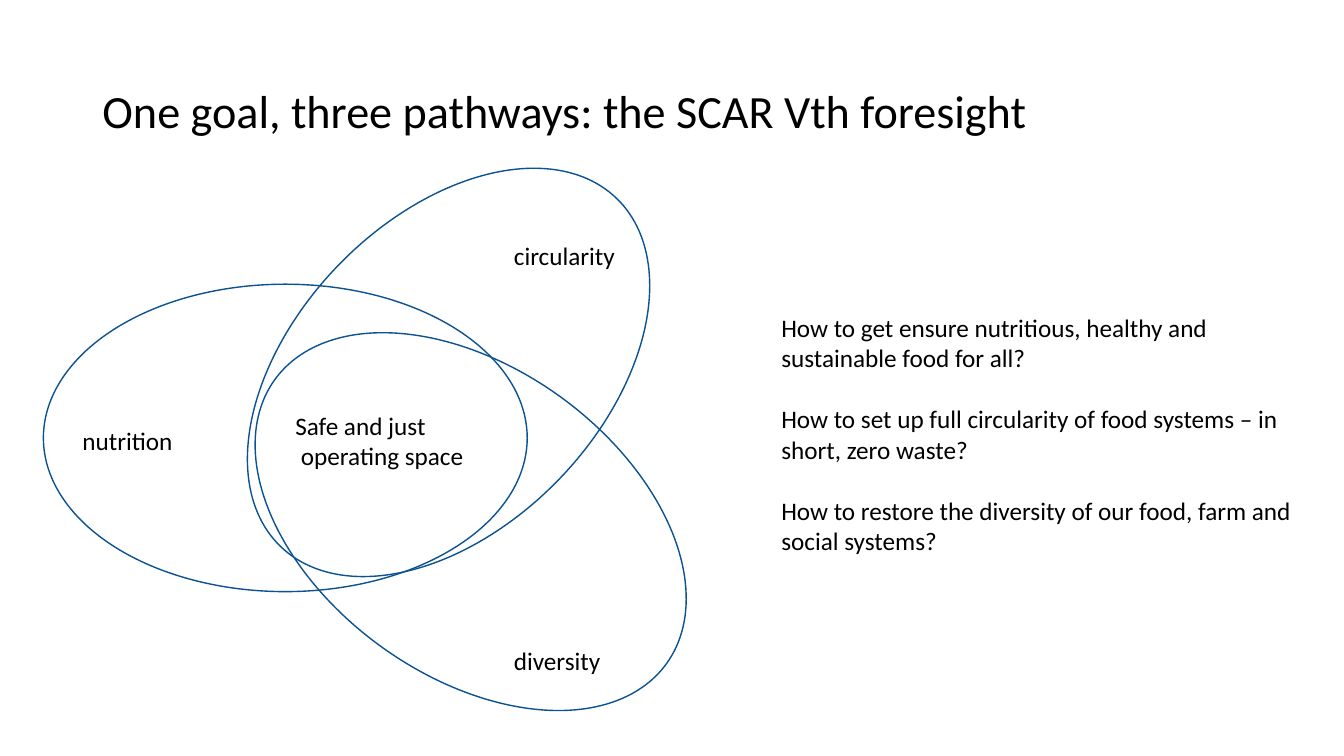
from collections import namedtuple

from pptx import Presentation
from pptx.dml.color import RGBColor
from pptx.enum.shapes import MSO_SHAPE
from pptx.enum.text import MSO_ANCHOR, MSO_AUTO_SIZE, PP_ALIGN
from pptx.util import Pt

Box = namedtuple("Box", "left top width height")

COLORS = {"text": "000000", "outline": "0B5292"}
FONT = "Calibri"
BODY_SIZE = 18
LINE_HEIGHT = 22
OVAL_WIDTH, OVAL_HEIGHT = 345.6, 219.6

PATHWAYS = [
    (116.6, 36.2, 134),
    (132.4, 142.8, 36),
    (0, 83, 0),
]
LABELS = [
    (["circularity"], Box(329, 47.8, 87.1, 29)),
    (["nutrition"], Box(20.8, 180.2, 79.9, 29)),
    (["diversity"], Box(329, 337.2, 77, 29)),
    (["Safe and just", " operating space"], Box(172.8, 169.4, 136.1, 51)),
]
QUESTIONS = [
    "How to get ensure nutritious, healthy and sustainable food for all?",
    "How to set up full circularity of food systems – in short, zero waste?",
    "How to restore the diversity of our food, farm and social systems?",
]


def style_paragraph(para, size):
    """Apply the common font and left alignment to a paragraph."""
    para.alignment = PP_ALIGN.LEFT
    para.font.name = FONT
    para.font.size = Pt(size)
    para.font.color.rgb = RGBColor.from_string(COLORS["text"])


def add_text(page, box, lines, wrap, gap=0):
    """Add a text box with one paragraph per line, set apart by gap."""
    frame = page.shapes.add_textbox(*map(Pt, box)).text_frame
    frame.word_wrap = wrap
    frame.auto_size = MSO_AUTO_SIZE.SHAPE_TO_FIT_TEXT
    for index, line in enumerate(lines):
        para = frame.add_paragraph() if index else frame.paragraphs[0]
        para.text = line
        para.space_before = Pt(gap if index else 0)
        style_paragraph(para, BODY_SIZE)


def fill_title(page, box, text):
    """Place and format the title placeholder."""
    title = page.shapes.title
    title.left, title.top, title.width, title.height = map(Pt, box)
    frame = title.text_frame
    frame.text = text
    frame.word_wrap = True
    frame.auto_size = MSO_AUTO_SIZE.NONE
    frame.vertical_anchor = MSO_ANCHOR.MIDDLE
    para = frame.paragraphs[0]
    para.line_spacing = 0.9
    style_paragraph(para, 33)


def add_pathway_diagram(page, box):
    """Draw three overlapping ovals and their labels inside the box."""
    for left, top, angle in PATHWAYS:
        oval = page.shapes.add_shape(
            MSO_SHAPE.OVAL, Pt(box.left + left), Pt(box.top + top),
            Pt(OVAL_WIDTH), Pt(OVAL_HEIGHT))
        oval.rotation = angle
        oval.shadow.inherit = False
        oval.fill.background()
        oval.line.color.rgb = RGBColor.from_string(COLORS["outline"])
        oval.line.width = Pt(1)
    for lines, label in LABELS:
        place = label._replace(left=box.left + label.left, top=box.top + label.top)
        add_text(page, place, lines, wrap=False)


def main():
    """Build the slide and save the deck."""
    deck = Presentation()
    deck.slide_width, deck.slide_height = Pt(960), Pt(540)
    page = deck.slides.add_slide(deck.slide_layouts[5])
    fill_title(page, Box(66, 28.8, 828, 104.4),
               "One goal, three pathways: the SCAR Vth foresight")
    add_pathway_diagram(page, Box(31, 120, 463, 393))
    add_text(page, Box(551, 219.6, 379.4, 203.8), QUESTIONS, wrap=True, gap=LINE_HEIGHT)
    deck.save("out.pptx")


if __name__ == "__main__":
    main()
